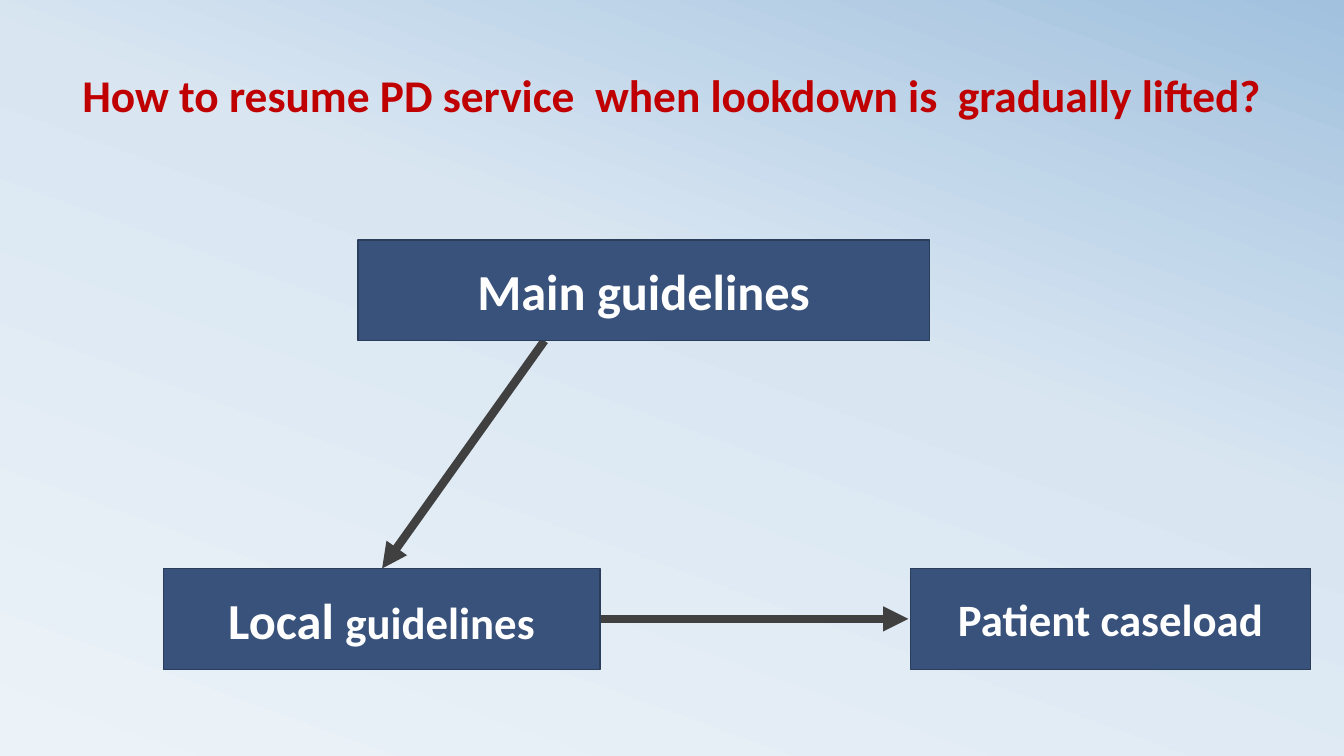
from copy import deepcopy
from dataclasses import dataclass

from pptx import Presentation
from pptx.dml.color import RGBColor
from pptx.enum.shapes import MSO_CONNECTOR, MSO_SHAPE
from pptx.enum.text import MSO_ANCHOR, PP_ALIGN
from pptx.oxml.ns import qn
from pptx.oxml.xmlchemy import OxmlElement
from pptx.slide import Slide
from pptx.text.text import TextFrame
from pptx.util import Inches, Pt

FONT = "Calibri"
RED = RGBColor(0xC0, 0x00, 0x00)
WHITE = RGBColor(0xFF, 0xFF, 0xFF)
NAVY = RGBColor(0x39, 0x52, 0x7B)
NAVY_EDGE = RGBColor(0x2A, 0x3D, 0x5B)
CHARCOAL = RGBColor(0x40, 0x40, 0x40)
BACKGROUND_STOPS = [
    (0, RGBColor(0xEC, 0xF3, 0xF8)),
    (0.58, RGBColor(0xD9, 0xE6, 0xF2)),
    (1, RGBColor(0xA1, 0xC1, 0xDE)),
]
SLIDE_WIDTH = 13.33
BOX_HEIGHT = 1
UPPER_TOP = 2.38
LOWER_TOP = 5.64
LOWER_MIDDLE = LOWER_TOP + BOX_HEIGHT / 2


@dataclass
class Span:
    text: str
    size: float


@dataclass
class Box:
    left: float
    top: float
    width: float
    spans: list[Span]


@dataclass
class Arrow:
    start: tuple[float, float]
    end: tuple[float, float]


TITLE = Span("How to resume PD service  when lookdown is  gradually lifted?", 32.4)
BOXES = [
    Box(3.55, UPPER_TOP, 5.67, [Span("Main guidelines", 36)]),
    Box(1.62, LOWER_TOP, 4.33, [Span("Local ", 36), Span("guidelines", 32)]),
    Box(9.03, LOWER_TOP, 3.97, [Span("Patient caseload", 32)]),
]
ARROWS = [
    Arrow((5.96, LOWER_MIDDLE), (9.01, LOWER_MIDDLE)),
    Arrow((5.4, UPPER_TOP + BOX_HEIGHT), (3.79, LOWER_TOP)),
]


def paint_background(page: Slide) -> None:
    fill = page.background.fill
    fill.gradient()
    fill.gradient_angle = 70
    stop_list = page.element.find(".//" + qn("a:gsLst"))
    stop_list.append(deepcopy(stop_list[0]))
    for stop, (position, color) in zip(fill.gradient_stops, BACKGROUND_STOPS):
        stop.position = position
        stop.color.rgb = color


def write(frame: TextFrame, spans: list[Span], color: RGBColor, anchor: MSO_ANCHOR) -> None:
    frame.word_wrap = True
    frame.vertical_anchor = anchor
    para = frame.paragraphs[0]
    para.alignment = PP_ALIGN.CENTER
    for span in spans:
        run = para.add_run()
        run.text = span.text
        run.font.name = FONT
        run.font.size = Pt(span.size)
        run.font.bold = True
        run.font.color.rgb = color


def draw_title(page: Slide) -> None:
    title = page.shapes.add_textbox(0, Inches(0.36), Inches(SLIDE_WIDTH), Inches(0.89))
    write(title.text_frame, [TITLE], RED, MSO_ANCHOR.BOTTOM)
    title.text_frame.paragraphs[0].line_spacing = 0.8


def draw_box(page: Slide, box: Box) -> None:
    shape = page.shapes.add_shape(
        MSO_SHAPE.RECTANGLE,
        Inches(box.left), Inches(box.top), Inches(box.width), Inches(BOX_HEIGHT),
    )
    shape.shadow.inherit = False
    shape.fill.solid()
    shape.fill.fore_color.rgb = NAVY
    shape.line.color.rgb = NAVY_EDGE
    shape.line.width = Pt(1)
    write(shape.text_frame, box.spans, WHITE, MSO_ANCHOR.MIDDLE)


def draw_arrow(page: Slide, arrow: Arrow) -> None:
    points = [Inches(value) for value in arrow.start + arrow.end]
    connector = page.shapes.add_connector(MSO_CONNECTOR.STRAIGHT, *points)
    connector.line.color.rgb = CHARCOAL
    connector.line.width = Pt(6)
    head = OxmlElement("a:tailEnd")
    head.set("type", "triangle")
    connector.element.spPr.find(qn("a:ln")).append(head)
    connector.element.spPr.append(OxmlElement("a:effectLst"))


def main() -> None:
    deck = Presentation()
    deck.slide_width = Inches(SLIDE_WIDTH)
    deck.slide_height = Inches(7.5)
    page = deck.slides.add_slide(deck.slide_layouts[6])
    paint_background(page)
    draw_title(page)
    for arrow in ARROWS:
        draw_arrow(page, arrow)
    for box in BOXES:
        draw_box(page, box)
    deck.save("out.pptx")


if __name__ == "__main__":
    main()
